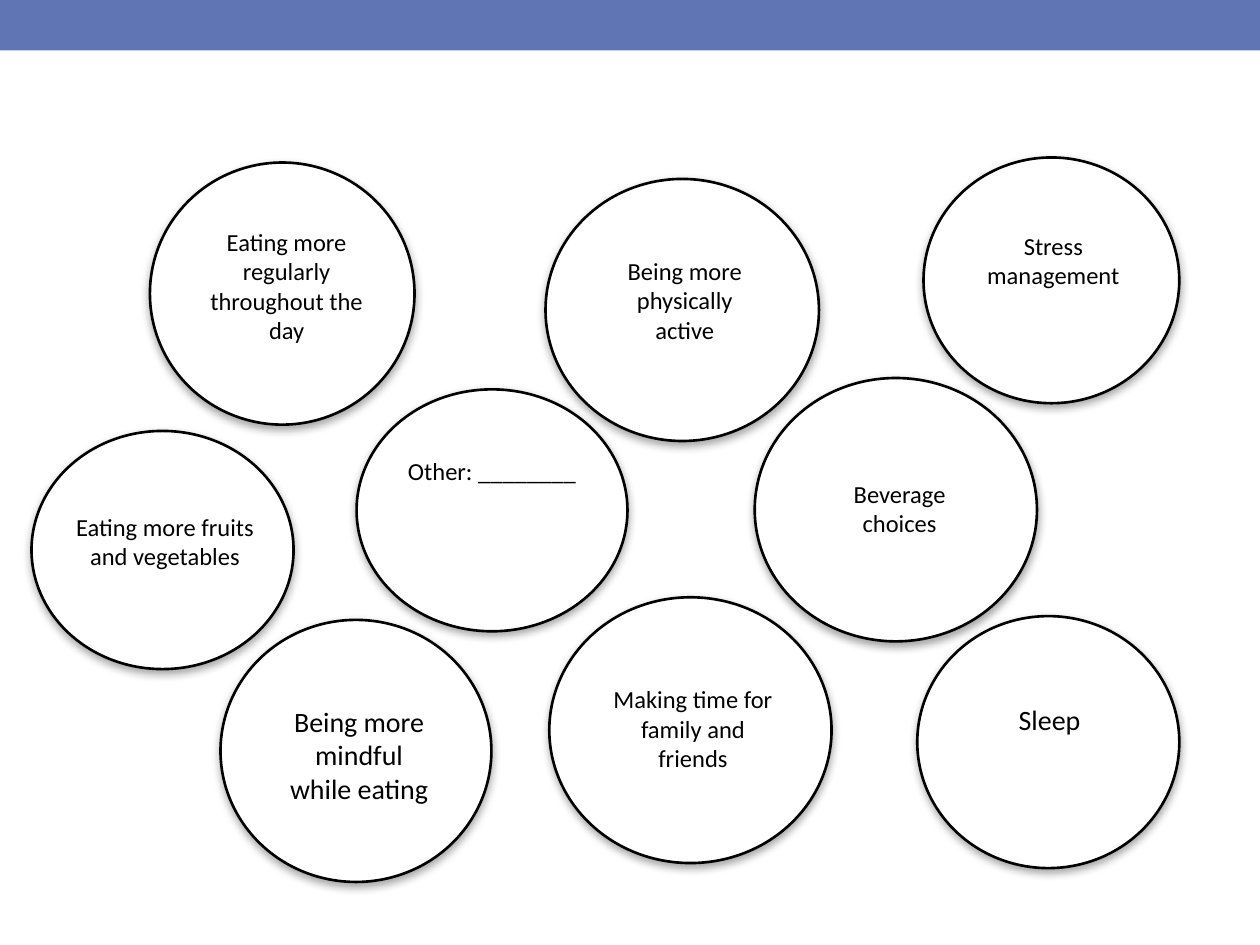
"""Build a slide of healthy-habit topics, each in its own circle."""
from lxml import etree
from pptx import Presentation
from pptx.dml.color import RGBColor
from pptx.enum import shapes, text
from pptx.oxml import ns
from pptx.util import Inches, Pt

BLACK = RGBColor(0x00, 0x00, 0x00)
WHITE = RGBColor(0xFF, 0xFF, 0xFF)
BLUE = RGBColor(0x60, 0x76, 0xB4)
FONT = "Calibri"
INSET = 0.1
SLIDE_SIZE = (10, 7.5)
BAR = (0, 0, 10, 0.4)

# wording, circle box, label box, font size, top inset, grouped
TOPICS = [
    ("Eating more regularly throughout the day",
     (1.19, 1.29, 2.1, 2.08), (1.57, 1.7, 1.41, 1.39), 14, INSET, True),
    ("Eating more fruits and vegetables",
     (0.25, 3.42, 2.08, 1.89), (0.38, 3.96, 1.86, 1.39), 14, INSET, True),
    ("Being more mindful while eating",
     (1.75, 4.92, 2.15, 2.08), (2.18, 5.49, 1.34, 0.84), 16, INSET, False),
    ("Other: ________",
     (2.83, 3.09, 2.15, 1.92), (2.97, 3.35, 1.87, 1.42), 14, 0.41, True),
    ("Being more physically active",
     (4.33, 1.42, 2.17, 2.08), (4.71, 1.93, 1.45, 1.4), 14, INSET, True),
    ("Stress management",
     (7.33, 1.25, 2.03, 1.95), (7.57, 1.73, 1.58, 1.01), 14, INSET, False),
    ("Sleep",
     (7.28, 4.89, 2.08, 2), (7.63, 5.48, 1.4, 1.34), 16, INSET, True),
    ("Beverage choices",
     (5.99, 3, 2.24, 2.09), (6.39, 3.7, 1.5, 1.4), 14, INSET, True),
    ("Making time for family and friends",
     (4.36, 4.74, 2.24, 2.11), (4.75, 5.33, 1.5, 1.56), 14, INSET, True),
]


def inches(box):
    return [Inches(length) for length in box]


def add_filled(parent, preset, box, color):
    filled = parent.add_shape(preset, *inches(box))
    filled.shadow.inherit = False
    filled.fill.solid()
    filled.fill.fore_color.rgb = color
    return filled


def add_soft_shadow(circle):
    effects = circle._element.spPr.find(ns.qn("a:effectLst"))
    shadow = etree.SubElement(
        effects, ns.qn("a:outerShdw"), blurRad=str(Pt(5)), dist=str(Pt(2.1)),
        dir=str(90 * 60000), rotWithShape="0")
    color = etree.SubElement(shadow, ns.qn("a:srgbClr"), val=str(BLACK))
    etree.SubElement(color, ns.qn("a:alpha"), val="35000")


def add_circle(parent, box):
    circle = add_filled(parent, shapes.MSO_SHAPE.OVAL, box, WHITE)
    circle.line.color.rgb = BLACK
    circle.line.width = Pt(1.5)
    add_soft_shadow(circle)


def add_label(parent, wording, box, size, top_inset):
    frame = parent.add_textbox(*inches(box)).text_frame
    frame.word_wrap = True
    frame.margin_left = frame.margin_right = frame.margin_bottom = Inches(INSET)
    frame.margin_top = Inches(top_inset)
    paragraph = frame.paragraphs[0]
    paragraph.alignment = text.PP_ALIGN.CENTER
    run = paragraph.add_run()
    run.text = wording
    run.font.name = FONT
    run.font.size = Pt(size)
    run.font.color.rgb = BLACK


def main():
    deck = Presentation()
    deck.slide_width, deck.slide_height = inches(SLIDE_SIZE)
    slide = deck.slides.add_slide(deck.slide_layouts[6])
    bar = add_filled(slide.shapes, shapes.MSO_SHAPE.RECTANGLE, BAR, BLUE)
    bar.line.fill.background()
    for wording, circle_box, label_box, size, top_inset, grouped in TOPICS:
        parent = slide.shapes.add_group_shape().shapes if grouped else slide.shapes
        add_circle(parent, circle_box)
        add_label(parent, wording, label_box, size, top_inset)
    deck.save("out.pptx")


if __name__ == "__main__":
    main()
